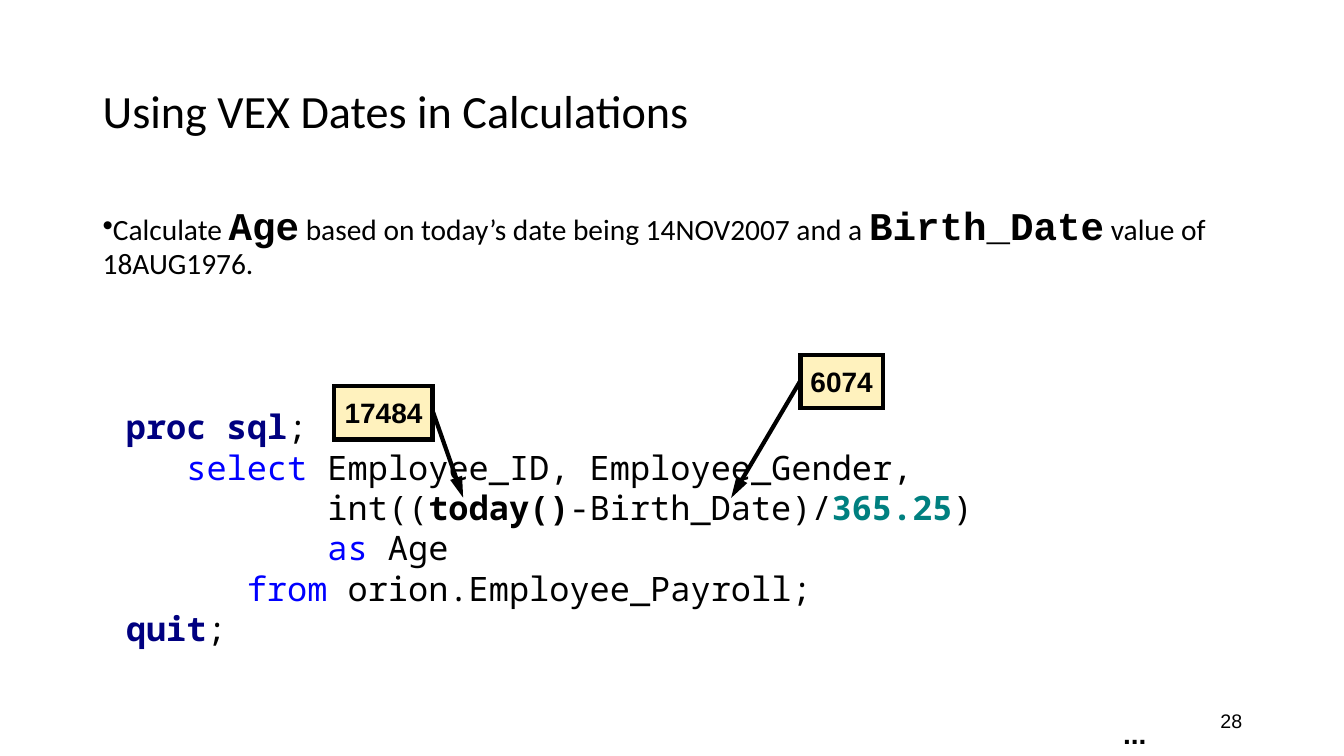
from lxml import etree
from pptx import Presentation
from pptx.dml.color import RGBColor
from pptx.enum.shapes import MSO_SHAPE
from pptx.enum.text import MSO_ANCHOR, PP_ALIGN
from pptx.oxml.ns import qn
from pptx.util import Inches, Pt

CALLOUT = MSO_SHAPE.LINE_CALLOUT_1
TOP, MIDDLE = MSO_ANCHOR.TOP, MSO_ANCHOR.MIDDLE
LEFT, RIGHT = PP_ALIGN.LEFT, PP_ALIGN.RIGHT

BLACK = RGBColor(0x00, 0x00, 0x00)
NAVY = RGBColor(0x00, 0x00, 0x80)
BLUE = RGBColor(0x00, 0x00, 0xFF)
TEAL = RGBColor(0x00, 0x80, 0x80)
CREAM = RGBColor(0xFF, 0xF2, 0xBE)

CODE_CHARACTER_WIDTH = 0.2


def add_text_box(left, top, width, height, anchor=TOP, wrap=True):
    frame = slide.shapes.add_textbox(
        Inches(left), Inches(top), Inches(width), Inches(height)).text_frame
    frame.word_wrap = wrap
    frame.vertical_anchor = anchor
    return frame


def add_span(para, text, font, size, bold=False, color=BLACK):
    span = para.add_run()
    span.text = text
    span.font.name = font
    span.font.size = Pt(size)
    span.font.bold = bold
    span.font.color.rgb = color


deck = Presentation()
deck.slide_width = Inches(13.33)
deck.slide_height = Inches(7.5)
slide = deck.slides.add_slide(deck.slide_layouts[6])

# Title
title = add_text_box(0.92, 0.4, 11.5, 1.45, MIDDLE).paragraphs[0]
title.line_spacing = 0.9
add_span(title, "Using VEX Dates in Calculations", "Calibri", 33)

# Bulleted task, with column names in bold monospace
task = add_text_box(0.92, 2, 11.5, 4.76).paragraphs[0]
task.line_spacing = 0.9
task.space_before = Pt(7.5)
task_properties = task._p.get_or_add_pPr()
etree.SubElement(task_properties, qn("a:buFont"), typeface="Arial")
etree.SubElement(task_properties, qn("a:buChar"), char="•")
for text, is_column in [
    ("Calculate ", False),
    ("Age", True),
    (" based on today’s date being 14NOV2007 and a ", False),
    ("Birth_Date", True),
    (" value of 18AUG1976.", False),
]:
    if is_column:
        add_span(task, text, "Courier New", 28, bold=True)
    else:
        add_span(task, text, "Calibri", 21)

# Page number
page_number = add_text_box(9.42, 6.95, 3, 0.4, MIDDLE).paragraphs[0]
page_number.alignment = RIGHT
add_span(page_number, "28", "Arial", 14)

# Date values, each pointing at its term in the code
for value, left, top, width, alignment, pointer in [
    ("17484", 3.31, 3.83, 0.98, RIGHT, (0.46, 1, 2.09, 1.31)),
    ("6074", 7.94, 3.52, 0.82, LEFT, (0.48, 0, 2.68, -0.84)),
]:
    box = slide.shapes.add_shape(
        CALLOUT, Inches(left), Inches(top), Inches(width), Inches(0.53))
    for index, position in enumerate(pointer):
        box.adjustments[index] = position
    box.shadow.inherit = False
    box.fill.solid()
    box.fill.fore_color.rgb = CREAM
    box.line.color.rgb = BLACK
    box.line.width = Pt(3)
    outline = box.line._get_or_add_ln()
    etree.SubElement(outline, qn("a:miter"), lim="800000")
    etree.SubElement(outline, qn("a:tailEnd"), type="triangle", len="lg")
    frame = box.text_frame
    frame.word_wrap = False
    frame.vertical_anchor = MIDDLE
    frame.margin_left = frame.margin_right = Inches(0.1)
    frame.margin_top = frame.margin_bottom = Inches(0.1)
    frame.paragraphs[0].alignment = alignment
    add_span(frame.paragraphs[0], value, "Arial", 20, bold=True)

# Continuation mark
continuation = add_text_box(11.04, 7.06, 0.43, 0.44, wrap=False).paragraphs[0]
add_span(continuation, "...", "Arial", 20, bold=True)

# Code: indent in characters, then spans of text, bold and colour
code_lines = [
    (0, [("proc sql", True, NAVY), (";", False, BLACK)]),
    (3, [("select ", False, BLUE),
         ("Employee_ID, Employee_Gender,", False, BLACK)]),
    (10, [("int((", False, BLACK), ("today()", True, BLACK),
          ("-Birth_Date)/", False, BLACK), ("365.25", True, TEAL),
          (")", False, BLACK)]),
    (10, [("as", False, BLUE), (" Age", False, BLACK)]),
    (6, [("from ", False, BLUE), ("orion.Employee_Payroll;", False, BLACK)]),
    (0, [("quit", True, NAVY), (";", False, BLACK)]),
]
code = add_text_box(1.15, 3.98, 11.17, 2.52)
for number, (indent, spans) in enumerate(code_lines):
    para = code.add_paragraph() if number else code.paragraphs[0]
    margin = Inches(indent * CODE_CHARACTER_WIDTH)
    para._p.get_or_add_pPr().set("marL", str(margin))
    for text, bold, color in spans:
        add_span(para, text, "Noto Sans Mono", 24, bold, color)

deck.save("out.pptx")
